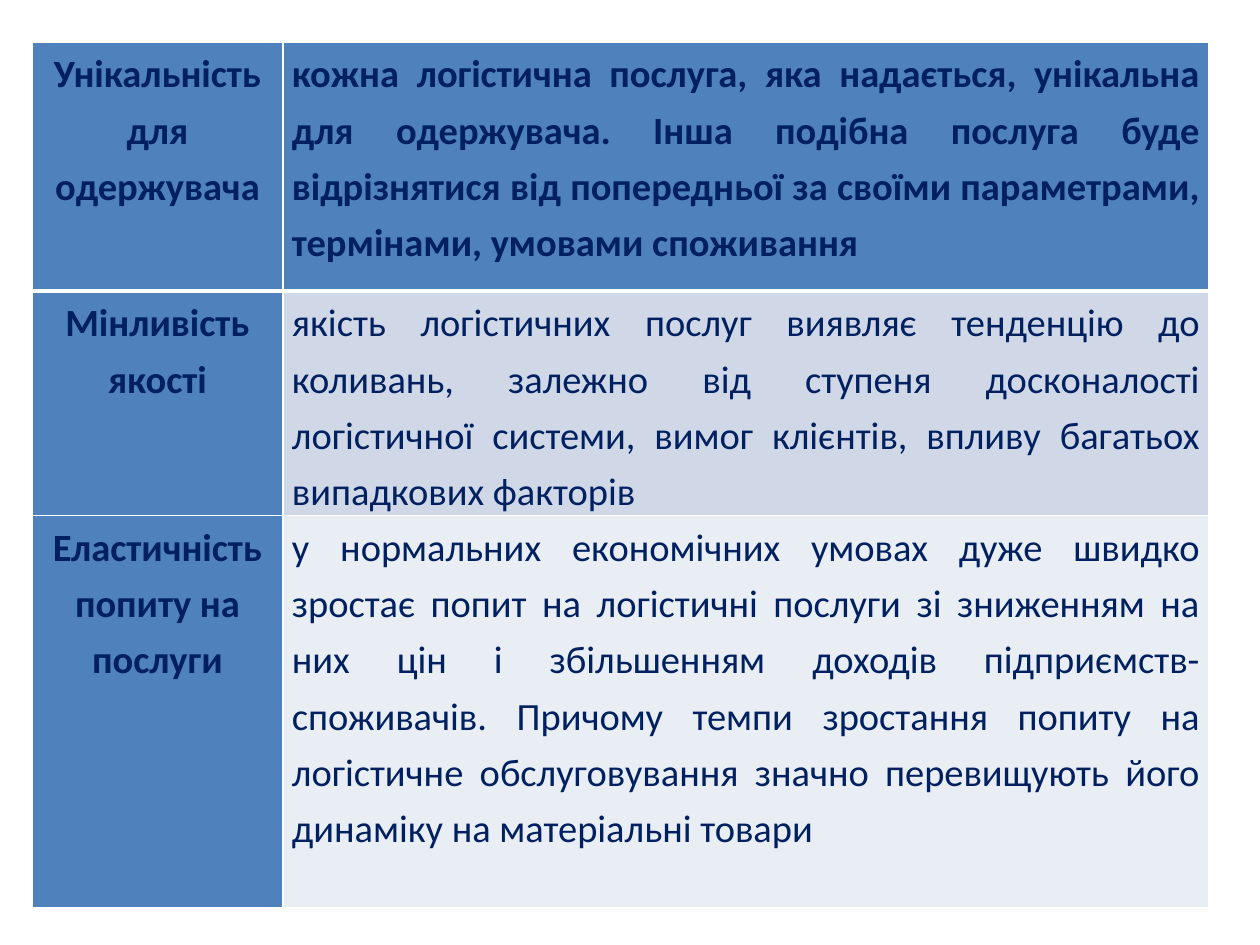
from lxml.etree import SubElement
from pptx import Presentation
from pptx.dml.color import RGBColor as RGB
from pptx.enum.text import PP_ALIGN as Align
from pptx.oxml.ns import qn
from pptx.util import Pt

COLORS = {"head": "4F81BD", "odd": "D0D8E8", "even": "E9EDF4",
          "text": "002060", "line": "FFFFFF"}
ROWS = [
    (249, "head", "Унікальність для одержувача",
     "кожна логістична послуга, яка надається, унікальна для одержувача. "
     "Інша подібна послуга буде відрізнятися від попередньої за своїми "
     "параметрами, термінами, умовами споживання"),
    (223, "odd", "Мінливість якості",
     "якість логістичних послуг виявляє тенденцію до коливань, залежно від "
     "ступеня досконалості логістичної системи, вимог клієнтів, впливу "
     "багатьох випадкових факторів"),
    (392, "even", "Еластичність попиту на послуги",
     "у нормальних економічних умовах дуже швидко зростає попит на "
     "логістичні послуги зі зниженням на них цін і збільшенням доходів "
     "підприємств-споживачів. Причому темпи зростання попиту на логістичне "
     "обслуговування значно перевищують його динаміку на матеріальні товари"),
]
COLS = [251, 926]


def px(n):
    return round(n * 914400 / 126)


def border(cell, side, width):
    line = SubElement(cell._tc.get_or_add_tcPr(), qn("a:ln" + side),
                      w=str(Pt(width)))
    fill = SubElement(line, qn("a:solidFill"))
    SubElement(fill, qn("a:srgbClr"), val=COLORS["line"])


prs = Presentation()
prs.slide_width, prs.slide_height = px(1260), px(945)
slide = prs.slides.add_slide(prs.slide_layouts[6])
high = sum(row[0] for row in ROWS)
table = slide.shapes.add_table(len(ROWS), len(COLS), px(32), px(42),
                               px(sum(COLS)), px(high)).table
for col, width in zip(table.columns, COLS):
    col.width = px(width)

for r, (height, shade, name, text) in enumerate(ROWS):
    table.rows[r].height = px(height)
    for c, words in enumerate((name, text)):
        cell = table.cell(r, c)
        cell.margin_left = cell.margin_right = px(9)
        cell.margin_top = cell.margin_bottom = 0
        # The rule under the first row is thicker than the rest
        for side, width in (("L", 1), ("R", 1), ("T", 3 if r == 1 else 1),
                            ("B", 3 if r == 0 else 1)):
            border(cell, side, width)
        cell.fill.solid()
        cell.fill.fore_color.rgb = RGB.from_string(
            COLORS["head" if c == 0 else shade])
        cell.text = words
        para = cell.text_frame.paragraphs[0]
        para.alignment = Align.JUSTIFY if c else Align.CENTER
        para.line_spacing = 1.2
        font = para.font
        font.name, font.size = "Calibri", Pt(22)
        font.bold = r == 0 or c == 0
        font.color.rgb = RGB.from_string(COLORS["text"])

prs.save("out.pptx")
